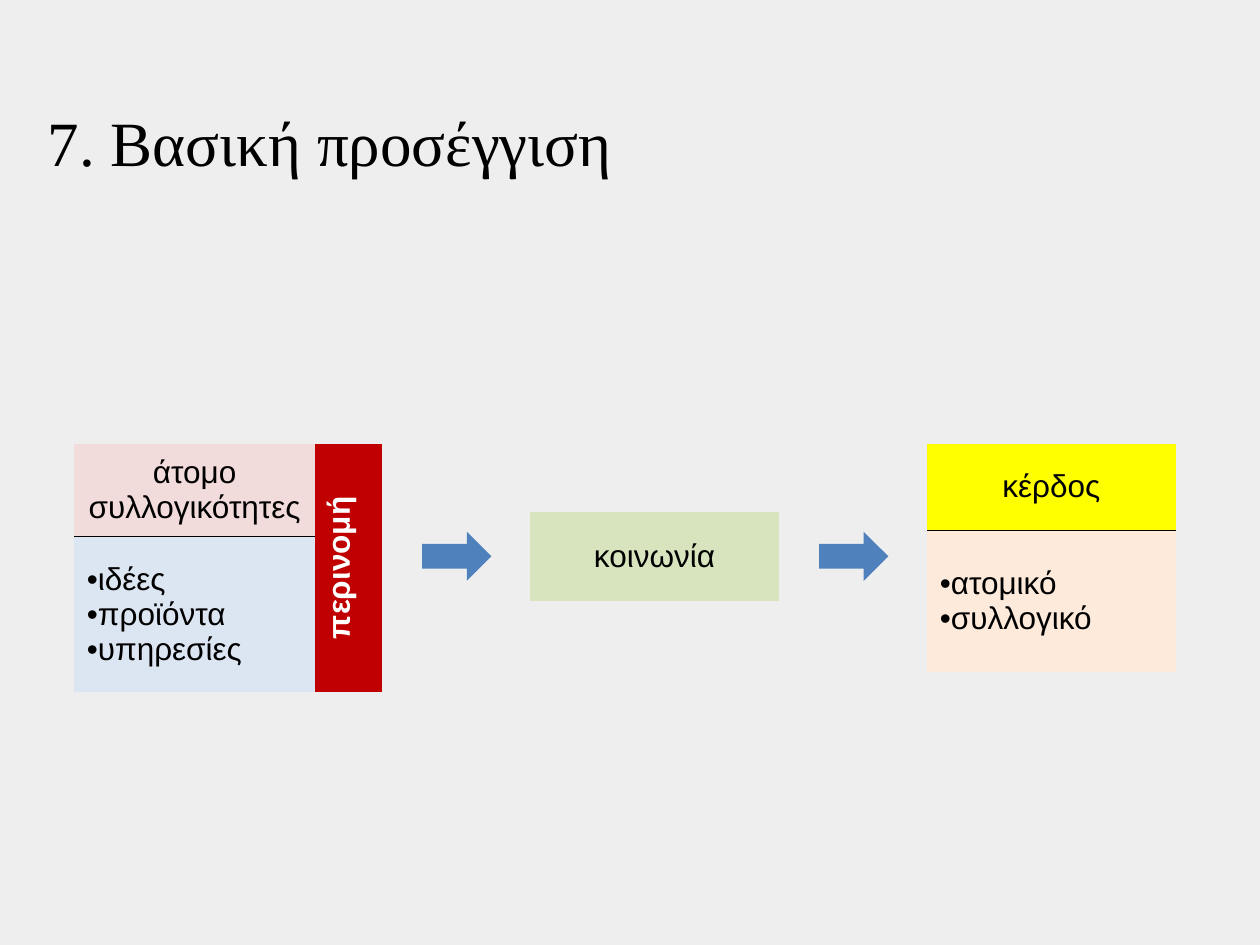
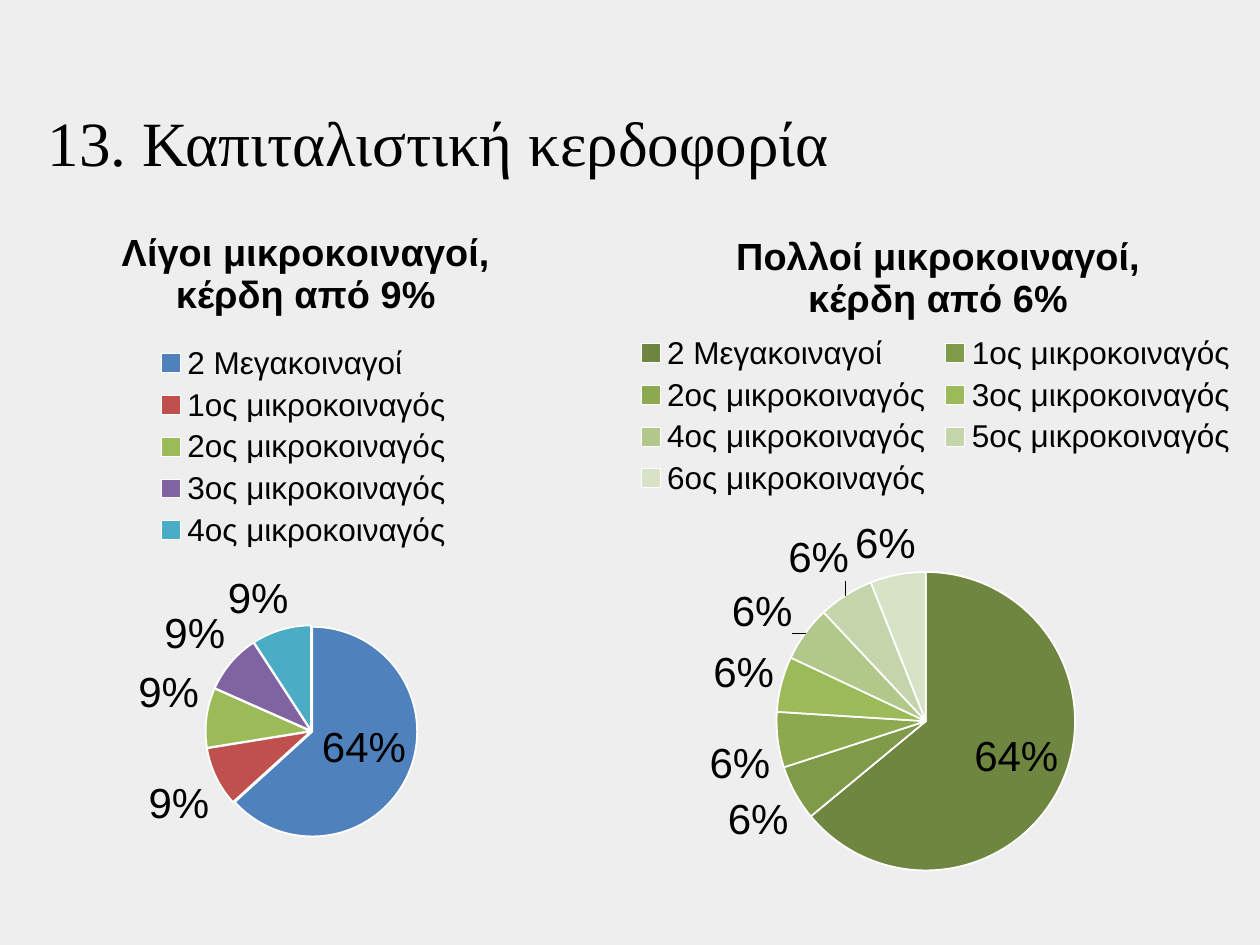
"""Build two slides: a process flow of tables and a pair of pie charts."""

from dataclasses import dataclass

import pptx
import pptx.chart.chart
import pptx.chart.data
import pptx.dml.color
import pptx.enum.chart
import pptx.enum.shapes
import pptx.enum.text
import pptx.oxml
import pptx.oxml.ns
import pptx.presentation
import pptx.slide
import pptx.table
import pptx.util

Inches = pptx.util.Inches
Pt = pptx.util.Pt


@dataclass(frozen=True)
class Theme:
    background: str = "EEEEEE"
    ink: str = "000000"
    paper: str = "FFFFFF"
    arrow: str = "4F81BD"
    title_font: str = "Times New Roman"
    body_font: str = "Arial"
    title_size: float = 36
    body_size: float = 18
    chart_title_size: float = 21.6
    label_size: float = 24


THEME = Theme()
NO_STYLE = "{2D5ABB26-0587-4C30-8999-92F81FD0307C}"


@dataclass(frozen=True)
class Block:
    lines: tuple[str, ...]
    fill: str
    row: int = 0
    column: int = 0
    row_span: int = 1
    bulleted: bool = False
    vertical: bool = False
    border: str = ""


@dataclass(frozen=True)
class FlowTable:
    left: float
    top: float
    widths: tuple[float, ...]
    heights: tuple[float, ...]
    blocks: tuple[Block, ...]


@dataclass(frozen=True)
class ProfitPie:
    title: str
    left: float
    top: float
    width: float
    values: tuple[int, ...]
    colors: tuple[str, ...]
    title_place: tuple[float, float]
    legend_place: tuple[float, float]
    plot_place: tuple[float, float, float, float]
    explosion: int = 0
    fixed_labels: tuple[str, ...] = ()


FLOW_TABLES = (
    FlowTable(0.59, 3.52, (1.91, 0.53), (0.74, 1.23), (
        Block(("άτομο", "συλλογικότητες"), "F2DCDB", border="lnB"),
        Block(("περινομή",), "C00000", column=1, row_span=2, vertical=True),
        Block(("ιδέες", "προϊόντα", "υπηρεσίες"), "DCE6F2", row=1, bulleted=True, border="lnT"),
    )),
    FlowTable(4.21, 4.06, (1.97,), (0.71,), (Block(("κοινωνία",), "D7E4BD"),)),
    FlowTable(7.36, 3.52, (1.97,), (0.69, 1.12), (
        Block(("κέρδος",), "FFFF00", border="lnB"),
        Block(("ατομικό", "συλλογικό"), "FDEADA", row=1, bulleted=True, border="lnT"),
    )),
)
ARROW_LEFTS = (3.35, 6.5)

PIES = (
    ProfitPie(
        "Λίγοι μικροκοιναγοί, κέρδη από 9%", 0, 1.7, 4.8, (62,) + (9,) * 4,
        ("4F81BD", "C0504D", "9BBB59", "8064A2", "4BACC6"),
        (0.19, 0.01), (0.25, 0.18), (0.34, 0.59, 0.35, 0.31), 1, ("64%", "9%"),
    ),
    ProfitPie(
        "Πολλοί μικροκοιναγοί, κέρδη από 6%", 4.8, 1.62, 5.2, (64,) + (6,) * 6,
        ("6F8640", "7F9A49", "8DA950", "9BBB59", "B1C88A", "C5D5AB", "D7E2C7"),
        (0.19, 0.03), (0.04, 0.18), (0.26, 0.53, 0.46, 0.43),
    ),
)


def rgb(value: str) -> pptx.dml.color.RGBColor:
    """Turn a hex string into a colour."""
    return pptx.dml.color.RGBColor.from_string(value)


def xml(tag: str, prefix: str, body: str = "", attributes: str = ""):
    """Make one namespaced element."""
    declarations = pptx.oxml.ns.nsdecls(*dict.fromkeys((prefix, "a")))
    return pptx.oxml.parse_xml(f"<{prefix}:{tag} {declarations} {attributes}>{body}</{prefix}:{tag}>")


def style_font(font, size: float, color: str = THEME.ink, bold: bool = False,
               name: str = THEME.body_font) -> None:
    """Apply size, colour, weight and family."""
    font.name = name
    font.size = Pt(size)
    font.bold = bold
    font.color.rgb = rgb(color)


def add_titled_slide(presentation: pptx.presentation.Presentation, text: str) -> pptx.slide.Slide:
    """Add a title-only slide with the shared title style."""
    slide = presentation.slides.add_slide(presentation.slide_layouts[5])
    title = slide.shapes.title
    title.left, title.top, title.width, title.height = map(Inches, (0.28, 0.37, 9.45, 1.1))
    frame = title.text_frame
    frame.word_wrap = True
    frame.vertical_anchor = pptx.enum.text.MSO_ANCHOR.BOTTOM
    paragraph = frame.paragraphs[0]
    paragraph.alignment = pptx.enum.text.PP_ALIGN.LEFT
    run = paragraph.add_run()
    run.text = text
    style_font(run.font, THEME.title_size, name=THEME.title_font)
    return slide


def fill_block(table: pptx.table.Table, block: Block) -> None:
    """Write and format one table cell."""
    cell = table.cell(block.row, block.column)
    if block.row_span > 1:
        cell.merge(table.cell(block.row + block.row_span - 1, block.column))
    properties = cell._tc.get_or_add_tcPr()
    if block.border:
        line = f'<a:solidFill><a:srgbClr val="{THEME.ink}"/></a:solidFill>'
        properties.append(xml(block.border, "a", line, f'w="{Pt(1)}"'))
    if block.vertical:
        properties.set("vert", "vert270")
    cell.fill.solid()
    cell.fill.fore_color.rgb = rgb(block.fill)
    cell.vertical_anchor = pptx.enum.text.MSO_ANCHOR.MIDDLE
    frame = cell.text_frame
    for index, text in enumerate(block.lines):
        paragraph = frame.add_paragraph() if index else frame.paragraphs[0]
        if block.bulleted:
            bullet = paragraph._p.get_or_add_pPr()
            bullet.append(xml("buFont", "a", attributes=f'typeface="{THEME.body_font}"'))
            bullet.append(xml("buChar", "a", attributes='char="•"'))
        else:
            paragraph.alignment = pptx.enum.text.PP_ALIGN.CENTER
        run = paragraph.add_run()
        run.text = text
        color = THEME.paper if block.vertical else THEME.ink
        style_font(run.font, THEME.body_size, color, block.vertical)


def add_flow_table(slide: pptx.slide.Slide, flow: FlowTable) -> None:
    """Draw one stage of the flow as a table."""
    table = slide.shapes.add_table(
        len(flow.heights), len(flow.widths), Inches(flow.left), Inches(flow.top),
        Inches(sum(flow.widths)), Inches(sum(flow.heights)),
    ).table
    table.first_row = table.horz_banding = False
    table._tbl.tblPr.find(pptx.oxml.ns.qn("a:tableStyleId")).text = NO_STYLE
    for column, width in zip(table.columns, flow.widths):
        column.width = Inches(width)
    for row, height in zip(table.rows, flow.heights):
        row.height = Inches(height)
    for block in flow.blocks:
        fill_block(table, block)


def add_arrow(slide: pptx.slide.Slide, left: float) -> None:
    """Draw a block arrow between two stages."""
    shape = slide.shapes.add_shape(
        pptx.enum.shapes.MSO_SHAPE.RIGHT_ARROW, Inches(left), Inches(4.22), Inches(0.55), Inches(0.39))
    shape.shadow.inherit = False
    shape.fill.solid()
    shape.fill.fore_color.rgb = rgb(THEME.arrow)
    shape.line.fill.background()


def place_part(part, previous_tag: str, place: tuple[float, ...], target: str = "") -> None:
    """Give a chart part a manual layout in fractions of the chart."""
    for old in part.findall(pptx.oxml.ns.qn("c:layout")):
        part.remove(old)
    body = target + "".join(f'<c:{name}Mode val="edge"/>' for name in "xy")
    body += "".join(f'<c:{name} val="{value}"/>' for name, value in zip("xywh", place))
    layout = xml("layout", "c", f"<c:manualLayout>{body}</c:manualLayout>")
    previous = part.find(pptx.oxml.ns.qn(previous_tag)) if previous_tag else None
    if previous is None:
        part.insert(0, layout)
    else:
        previous.addnext(layout)


def place_parts(chart: pptx.chart.chart.Chart, pie: ProfitPie) -> None:
    """Place title, legend and plot, and clear the chart background."""
    place_part(chart.chart_title._element, "c:tx", pie.title_place)
    place_part(chart.legend._element, "c:legendPos", pie.legend_place)
    place_part(chart._chartSpace.chart.plotArea, "", pie.plot_place, '<c:layoutTarget val="inner"/>')
    chart._chartSpace.chart.addnext(xml("spPr", "c", "<a:noFill/><a:ln><a:noFill/></a:ln>"))


def add_profit_pie(slide: pptx.slide.Slide, pie: ProfitPie) -> None:
    """Draw one pie with title, legend and percent labels."""
    data = pptx.chart.data.CategoryChartData()
    data.categories = ["2 Μεγακοιναγοί"] + [
        f"{number}ος μικροκοιναγός" for number in range(1, len(pie.values))]
    data.add_series("Series 1", pie.values)
    chart = slide.shapes.add_chart(
        pptx.enum.chart.XL_CHART_TYPE.PIE, Inches(pie.left), Inches(pie.top),
        Inches(pie.width), Inches(5.51), data,
    ).chart
    style_font(chart.font, THEME.body_size)
    chart.has_title = True
    run = chart.chart_title.text_frame.paragraphs[0].add_run()
    run.text = pie.title
    style_font(run.font, THEME.chart_title_size, bold=True)
    chart.chart_title.include_in_layout = False
    chart.has_legend = True
    chart.legend.position = pptx.enum.chart.XL_LEGEND_POSITION.TOP
    chart.legend.include_in_layout = False
    place_parts(chart, pie)

    plot = chart.plots[0]
    plot.vary_by_categories = True
    series = plot.series[0]
    for index, color in enumerate(pie.colors):
        area = series.points[index].format
        area.fill.solid()
        area.fill.fore_color.rgb = rgb(color)
        area.line.color.rgb = rgb(THEME.paper)
        area.line.width = Pt(1)
    if pie.explosion:
        first_point = series._element.find(pptx.oxml.ns.qn("c:dPt"))
        first_point.addprevious(xml("explosion", "c", attributes=f'val="{pie.explosion}"'))
    labels = series.data_labels
    labels.show_percentage = True
    labels.show_value = False
    labels.number_format = "0%"
    labels.number_format_is_linked = False
    labels.position = pptx.enum.chart.XL_LABEL_POSITION.BEST_FIT
    style_font(labels.font, THEME.label_size)
    for index, text in enumerate(pie.fixed_labels):
        label = series.points[index].data_label
        run = label.text_frame.paragraphs[0].add_run()
        run.text = text
        style_font(run.font, THEME.label_size)
        label.position = pptx.enum.chart.XL_LABEL_POSITION.BEST_FIT


def main() -> None:
    """Build and save the presentation."""
    presentation = pptx.Presentation()
    presentation.slide_width, presentation.slide_height = Inches(10), Inches(7.5)
    background = presentation.slide_master.background.fill
    background.solid()
    background.fore_color.rgb = rgb(THEME.background)

    approach = add_titled_slide(presentation, "7. Βασική προσέγγιση")
    for flow in FLOW_TABLES:
        add_flow_table(approach, flow)
    for left in ARROW_LEFTS:
        add_arrow(approach, left)

    profitability = add_titled_slide(presentation, "13. Καπιταλιστική κερδοφορία")
    for pie in PIES:
        add_profit_pie(profitability, pie)
    presentation.save("out.pptx")


if __name__ == "__main__":
    main()
